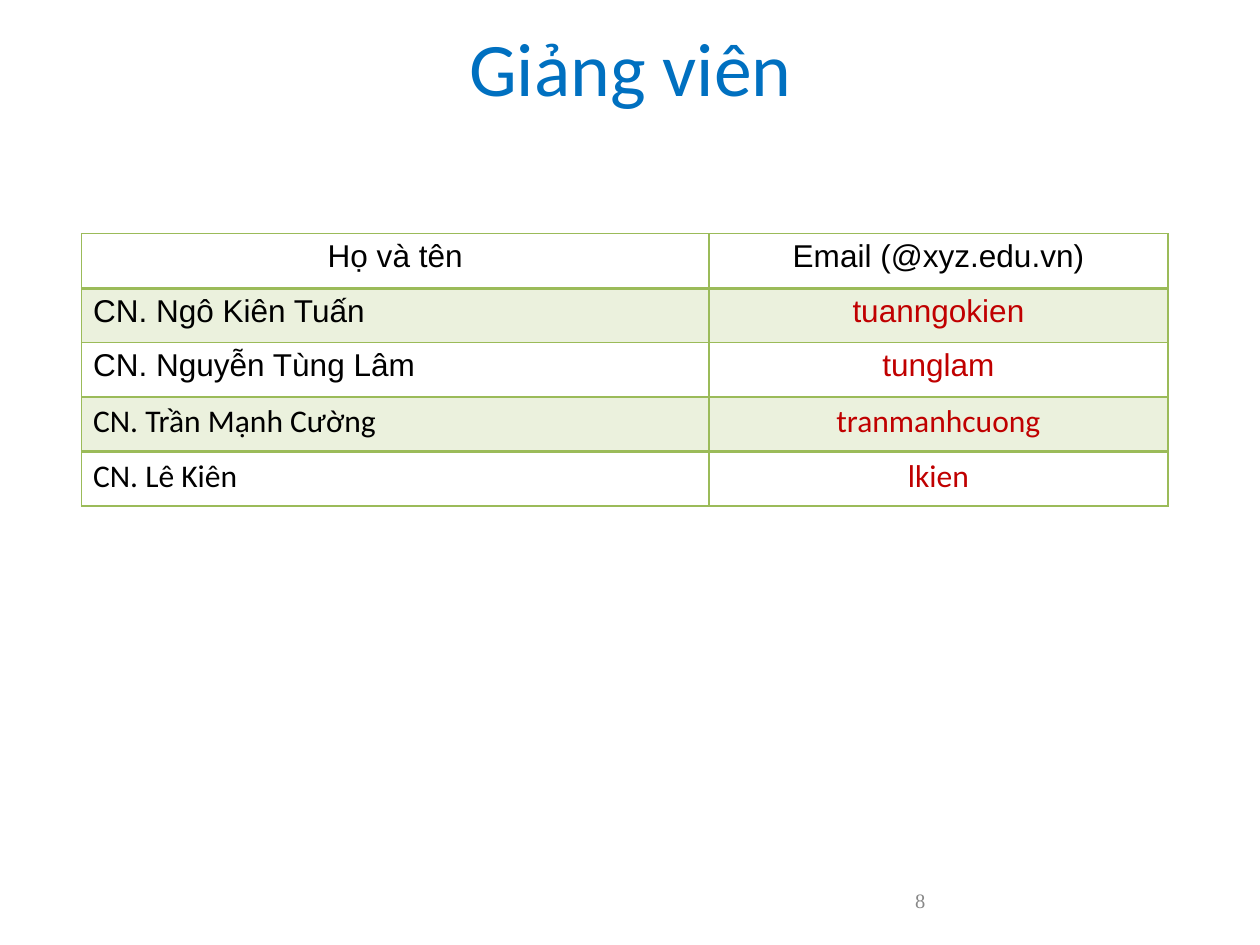
from dataclasses import dataclass

from lxml.etree import SubElement
from pptx import Presentation
from pptx.dml.color import RGBColor
from pptx.enum.text import MSO_ANCHOR, PP_ALIGN
from pptx.oxml.ns import qn
from pptx.slide import Slide
from pptx.table import _Cell
from pptx.text.text import TextFrame
from pptx.util import Inches, Pt

BLUE = RGBColor(0x00, 0x70, 0xC0)
GREEN = RGBColor(0x9B, 0xBB, 0x59)
RED = RGBColor(0xC0, 0x00, 0x00)
BLACK = RGBColor(0x00, 0x00, 0x00)
GRAY = RGBColor(0x88, 0x88, 0x88)

COLUMN_WIDTHS = (5.53, 4.05)
ROW_HEIGHT = 0.48
BAND_OPACITY = 20
RULE_WIDTHS = (1, 2, 1, 1, 2, 2)
FRAME_FORMAT = {
    "word_wrap": True,
    "vertical_anchor": MSO_ANCHOR.MIDDLE,
    "margin_left": Inches(0.11),
    "margin_right": Inches(0.11),
    "margin_top": Inches(0.06),
    "margin_bottom": Inches(0.06),
}


@dataclass(frozen=True)
class TextStyle:
    font: str
    size: float
    color: RGBColor
    alignment: PP_ALIGN = PP_ALIGN.LEFT


@dataclass(frozen=True)
class Lecturer:
    name: str
    email: str
    font: str


HEADER = Lecturer("Họ và tên", "Email (@xyz.edu.vn)", "Arial")
LECTURERS = (
    Lecturer("CN. Ngô Kiên Tuấn", "tuanngokien", "Arial"),
    Lecturer("CN. Nguyễn Tùng Lâm", "tunglam", "Arial"),
    Lecturer("CN. Trần Mạnh Cường", "tranmanhcuong", "Calibri"),
    Lecturer("CN. Lê Kiên", "lkien", "Calibri"),
)


def write_text(frame: TextFrame, text: str, style: TextStyle) -> None:
    paragraph = frame.paragraphs[0]
    paragraph.alignment = style.alignment
    run = paragraph.add_run()
    run.text = text
    font_format = {"name": style.font, "size": Pt(style.size), "bold": False}
    for attribute, value in font_format.items():
        setattr(run.font, attribute, value)
    run.font.color.rgb = style.color


def format_frame(frame: TextFrame) -> None:
    for attribute, value in FRAME_FORMAT.items():
        setattr(frame, attribute, value)


def draw_borders(cell: _Cell, top: float, bottom: float) -> None:
    properties = cell._tc.get_or_add_tcPr()
    for side, width in {"lnL": 1, "lnR": 1, "lnT": top, "lnB": bottom}.items():
        line = SubElement(properties, qn(f"a:{side}"), w=str(Pt(width)))
        fill = SubElement(line, qn("a:solidFill"))
        SubElement(fill, qn("a:srgbClr"), val=str(GREEN))


def fill_cell(cell: _Cell, banded: bool) -> None:
    if not banded:
        cell.fill.background()
        return
    cell.fill.solid()
    cell.fill.fore_color.rgb = GREEN
    color = cell._tc.tcPr.find(f"{qn('a:solidFill')}/{qn('a:srgbClr')}")
    SubElement(color, qn("a:alpha"), val=str(BAND_OPACITY * 1000))


def add_title(slide: Slide) -> None:
    title = slide.shapes.title
    position = {"left": 0.56, "top": 0, "width": 10, "height": 1.17}
    for attribute, value in position.items():
        setattr(title, attribute, Inches(value))
    format_frame(title.text_frame)
    style = TextStyle("Calibri", 48, BLUE, PP_ALIGN.CENTER)
    write_text(title.text_frame, "Giảng viên", style)


def add_lecturer_table(slide: Slide) -> None:
    rows = (HEADER, *LECTURERS)
    table = slide.shapes.add_table(
        len(rows), len(COLUMN_WIDTHS), Inches(0.72), Inches(2.06),
        Inches(sum(COLUMN_WIDTHS)), Inches(ROW_HEIGHT * len(rows)),
    ).table
    for attribute, value in {"first_row": False, "horz_banding": False}.items():
        setattr(table, attribute, value)
    for column, width in zip(table.columns, COLUMN_WIDTHS):
        column.width = Inches(width)
    for index, lecturer in enumerate(rows):
        is_header = lecturer is HEADER
        name_alignment = PP_ALIGN.CENTER if is_header else PP_ALIGN.LEFT
        email_color = BLACK if is_header else RED
        entries = (
            (lecturer.name, TextStyle(lecturer.font, 20, BLACK, name_alignment)),
            (lecturer.email, TextStyle(lecturer.font, 20, email_color, PP_ALIGN.CENTER)),
        )
        for column_index, (text, style) in enumerate(entries):
            cell = table.cell(index, column_index)
            draw_borders(cell, RULE_WIDTHS[index], RULE_WIDTHS[index + 1])
            fill_cell(cell, banded=index % 2 == 1)
            write_text(cell.text_frame, text, style)


def add_page_number(slide: Slide) -> None:
    box = slide.shapes.add_textbox(
        Inches(7.96), Inches(7.72), Inches(2.59), Inches(0.44)
    )
    format_frame(box.text_frame)
    write_text(box.text_frame, "8", TextStyle("Times New Roman", 13, GRAY))


def main() -> None:
    presentation = Presentation()
    presentation.slide_width = Inches(11.11)
    presentation.slide_height = Inches(8.33)
    slide = presentation.slides.add_slide(presentation.slide_layouts[5])
    add_title(slide)
    add_lecturer_table(slide)
    add_page_number(slide)
    presentation.save("out.pptx")


if __name__ == "__main__":
    main()
